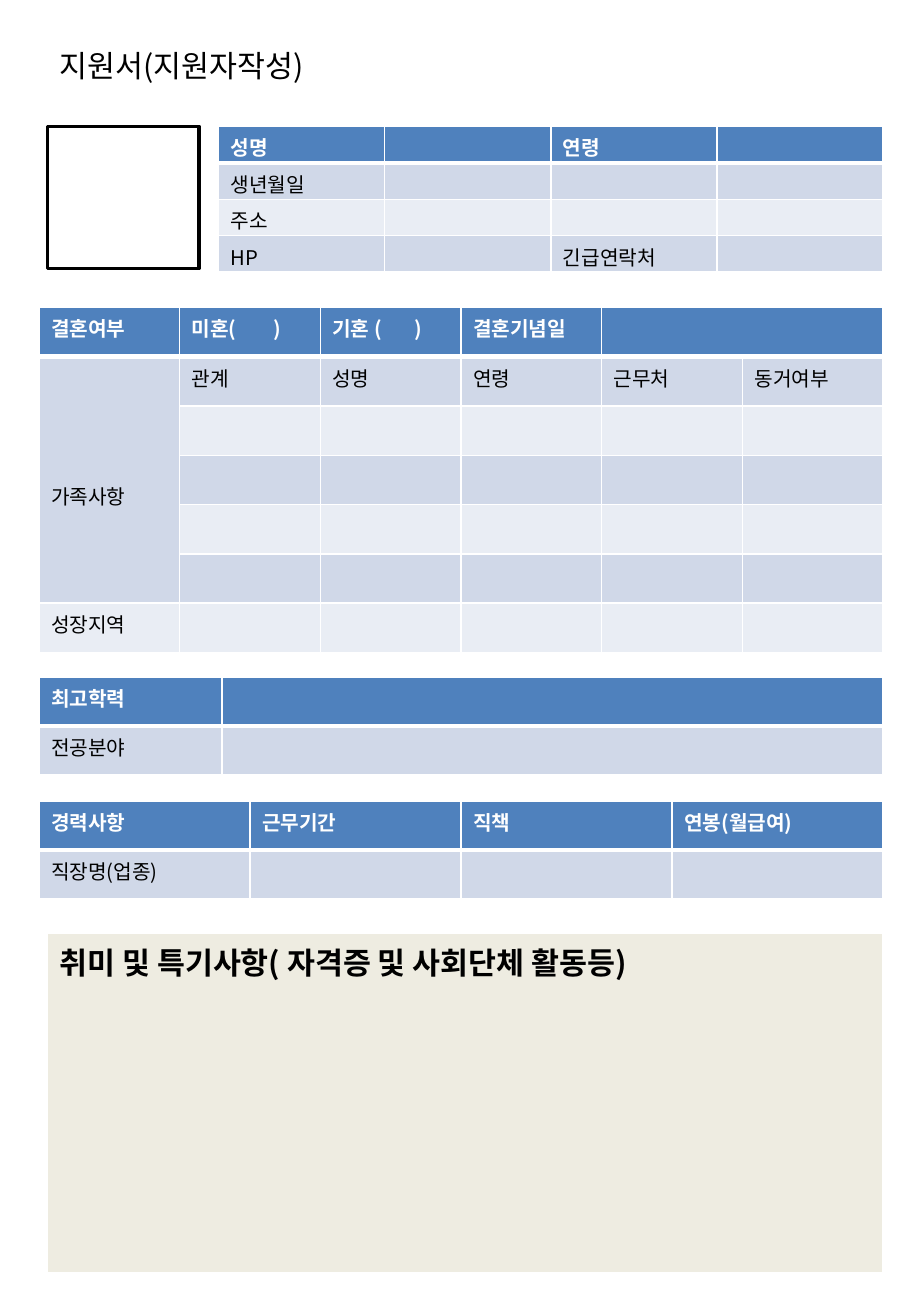
from dataclasses import dataclass

from lxml.etree import SubElement
from pptx import Presentation
from pptx.dml.color import RGBColor
from pptx.enum.shapes import MSO_SHAPE
from pptx.enum.text import MSO_AUTO_SIZE
from pptx.oxml.ns import qn
from pptx.util import Emu, Pt

EMU_PER_PX = 9144


@dataclass(frozen=True)
class Theme:
    font: str = "Noto Sans CJK KR"
    black: str = "000000"
    white: str = "FFFFFF"
    header: str = "4F81BD"
    band_dark: str = "D0D8E8"
    band_light: str = "E9EDF4"
    notes: str = "EEECE1"
    title_size: int = 18
    body_size: int = 12
    thin: int = 1
    thick: int = 3


THEME = Theme()


def px(length):
    return Emu(round(length * EMU_PER_PX))


def color(value):
    return RGBColor.from_string(value)


def write_text(frame, text, size=THEME.body_size, ink=THEME.black, bold=False):
    para = frame.paragraphs[0]
    if not text:
        SubElement(para._p, qn("a:endParaRPr"), sz=str(size * 100))
        return
    span = para.add_run()
    span.text = text
    span.font.name = THEME.font
    span.font.size = Pt(size)
    span.font.bold = bold
    span.font.color.rgb = color(ink)
    SubElement(span.font._element, qn("a:ea"), typeface=THEME.font)


def set_borders(cell, top, bottom):
    """Draw white cell borders; the fill element must follow them, so fill later."""
    properties = cell._tc.get_or_add_tcPr()
    widths = {"lnL": THEME.thin, "lnR": THEME.thin, "lnT": top, "lnB": bottom}
    for tag, width in widths.items():
        line = SubElement(properties, qn(f"a:{tag}"), w=str(Pt(width)))
        fill = SubElement(line, qn("a:solidFill"))
        SubElement(fill, qn("a:srgbClr"), val=THEME.white)


def fill_cell(cell, fill):
    cell.fill.solid()
    cell.fill.fore_color.rgb = color(fill)


def add_grid(page, left, top, width, height, rows, shares=None):
    """Add a table with a header row, bands, equal rows and columns sized by shares."""
    shares = shares or [1] * len(rows[0])
    frame = page.shapes.add_table(
        len(rows), len(shares), px(left), px(top), px(width), px(height))
    table = frame.table
    for column, share in zip(table.columns, shares):
        column.width = px(width * share / sum(shares))
    for row in table.rows:
        row.height = px(height / len(rows))
    for r, texts in enumerate(rows):
        is_header = r == 0
        band = THEME.band_dark if r % 2 else THEME.band_light
        for c, text in enumerate(texts):
            cell = table.cell(r, c)
            set_borders(cell, THEME.thick if r == 1 else THEME.thin,
                        THEME.thick if is_header else THEME.thin)
            fill_cell(cell, THEME.header if is_header else band)
            cell.margin_bottom = 0
            write_text(cell.text_frame, text, bold=is_header,
                       ink=THEME.white if is_header else THEME.black)
    return table


def add_title(page, text):
    box = page.shapes.add_textbox(px(39), px(34), px(238), px(40))
    box.text_frame.word_wrap = True
    box.text_frame.auto_size = MSO_AUTO_SIZE.SHAPE_TO_FIT_TEXT
    write_text(box.text_frame, text, size=THEME.title_size)


def add_photo_frame(page):
    frame = page.shapes.add_shape(
        MSO_SHAPE.RECTANGLE, px(39), px(104), px(125), px(117))
    frame.shadow.inherit = False
    frame.fill.solid()
    frame.fill.fore_color.rgb = color(THEME.white)
    frame.line.color.rgb = color(THEME.black)
    frame.line.width = Pt(2)


def add_family_table(page):
    table = add_grid(page, 32, 253, 695, 284, [
        ["결혼여부", "미혼(        )", "기혼 (       )", "결혼기념일", "", ""],
        ["가족사항", "관계", "성명", "연령", "근무처", "동거여부"],
        *[[""] * 6 for _ in range(4)],
        ["성장지역", "", "", "", "", ""],
    ])
    table.cell(0, 4).merge(table.cell(0, 5))
    family = table.cell(1, 0)
    family.merge(table.cell(5, 0))
    family.margin_top = px(102)


def add_notes_panel(page, text):
    frame = page.shapes.add_table(1, 1, px(39), px(768), px(688), px(281))
    cell = frame.table.cell(0, 0)
    set_borders(cell, THEME.thin, THEME.thick)
    fill_cell(cell, THEME.notes)
    write_text(cell.text_frame, text, size=THEME.title_size, bold=True)


def main():
    deck = Presentation()
    deck.slide_width, deck.slide_height = px(750), px(1083)
    page = deck.slides.add_slide(deck.slide_layouts[6])

    add_title(page, "지원서(지원자작성)")
    add_photo_frame(page)
    add_grid(page, 180, 104, 547, 120, [
        ["성명", "", "연령", ""],
        ["생년월일", "", "", ""],
        ["주소", "", "", ""],
        ["HP", "", "긴급연락처", ""],
    ])
    add_family_table(page)
    add_grid(page, 32, 557, 695, 81,
             [["최고학력", ""], ["전공분야", ""]], shares=[151, 545])
    add_grid(page, 32, 659, 695, 81, [
        ["경력사항", "근무기간", "직책", "연봉(월급여)"],
        ["직장명(업종)", "", "", ""],
    ])
    add_notes_panel(page, "취미 및 특기사항( 자격증 및 사회단체 활동등)")
    deck.save("out.pptx")


if __name__ == "__main__":
    main()
